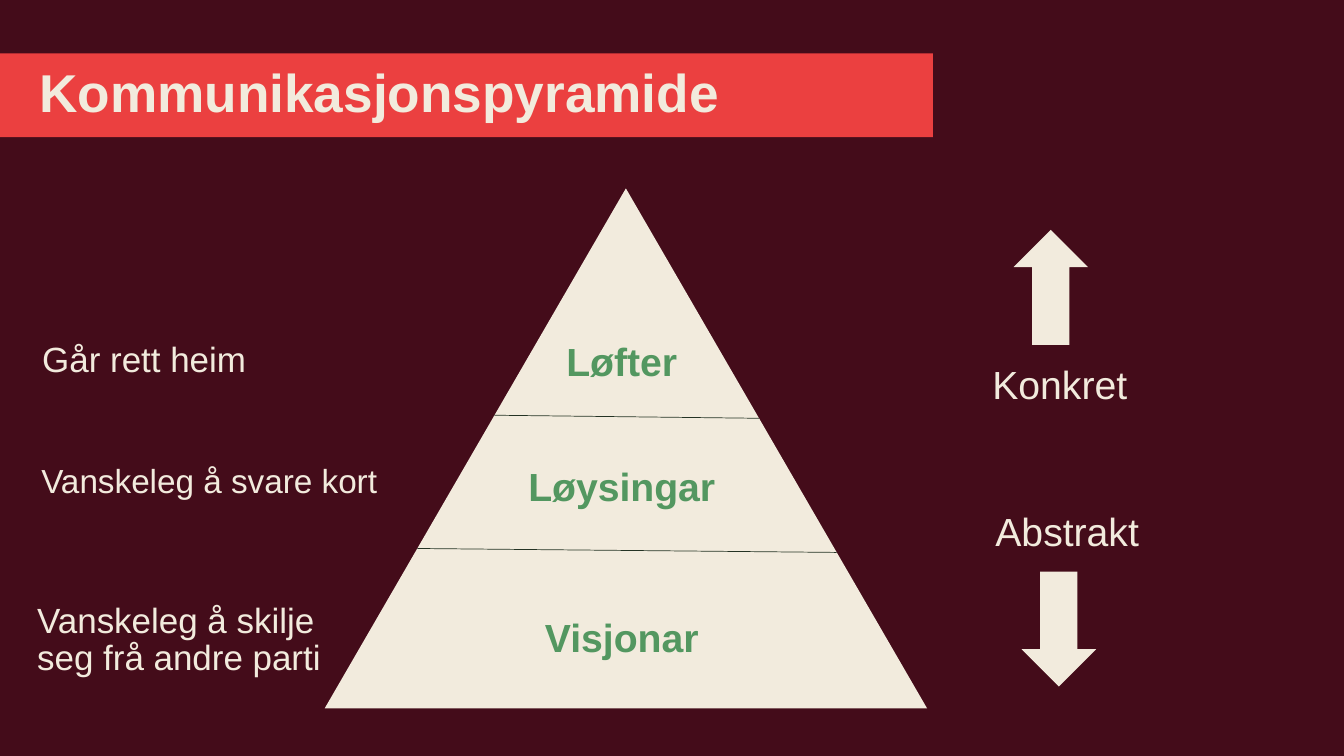
from lxml import etree
from pptx import Presentation
from pptx import util as u
from pptx.dml import color
from pptx.enum import shapes, text
from pptx.oxml import ns

Pt = u.Pt
COLORS = {"background": "440C1A", "banner": "EB4040", "cream": "F2EBDD",
          "green": "539760", "divider": "243324"}
FONT = "Arial"


def rgb(name):
    return color.RGBColor.from_string(COLORS[name])


def paint(shape, fill):
    shape.fill.solid()
    shape.fill.fore_color.rgb = rgb(fill)
    shape.line.fill.background()
    shape.shadow.inherit = False


def write(shape, wording, size, ink="cream", bold=False, spacing=0.9,
          align=text.PP_ALIGN.LEFT, anchor=text.MSO_ANCHOR.TOP, inset=0):
    frame = shape.text_frame
    frame.text = wording
    frame_format = {"word_wrap": True, "auto_size": text.MSO_AUTO_SIZE.NONE,
                    "vertical_anchor": anchor,
                    "margin_left": Pt(inset), "margin_right": Pt(inset),
                    "margin_top": 0, "margin_bottom": 0}
    for key, value in frame_format.items():
        setattr(frame, key, value)
    paragraph = frame.paragraphs[0]
    for key, value in {"alignment": align, "line_spacing": spacing,
                       "space_before": Pt(0)}.items():
        setattr(paragraph, key, value)
    font = paragraph.runs[0].font
    for key, value in {"name": FONT, "size": Pt(size), "bold": bold}.items():
        setattr(font, key, value)
    font.color.rgb = rgb(ink)


def add_label(slide, box, wording, size, **style):
    label = slide.shapes.add_textbox(*map(Pt, box))
    write(label, wording, size, **style)


def add_banner(slide, box, wording):
    banner = slide.shapes.title
    for key, value in zip(("left", "top", "width", "height"), box):
        setattr(banner, key, Pt(value))
    paint(banner, "banner")
    write(banner, wording, 38, bold=True, anchor=text.MSO_ANCHOR.MIDDLE, inset=28)


def add_divider(slide, start, end):
    divider = slide.shapes.add_connector(
        shapes.MSO_CONNECTOR.STRAIGHT, *map(Pt, start + end))
    divider.line.color.rgb = rgb("divider")
    divider.line.width = Pt(0.5)
    etree.SubElement(divider.element.spPr, ns.qn("a:effectLst"))


def add_pyramid(slide, box):
    left, top, width, height = box
    pyramid = slide.shapes.add_shape(
        shapes.MSO_SHAPE.ISOSCELES_TRIANGLE, *map(Pt, box))
    paint(pyramid, "cream")
    tier_width = 262
    tier_left = left + (width - tier_width) / 2 - 3
    for tier, offset in (("Løfter", 110.2), ("Løysingar", 199.5), ("Visjonar", 307.5)):
        add_label(slide, (tier_left, top + offset, tier_width, 43), tier, 28,
                  ink="green", bold=True, align=text.PP_ALIGN.CENTER)
    # Each divider runs from the left edge of the triangle to the right one
    for left_drop, right_drop in ((162, 164.2), (257.2, 260)):
        middle, slope = left + width / 2, width / height / 2
        add_divider(slide, (middle - left_drop * slope, top + left_drop),
                    (middle + right_drop * slope, top + right_drop))


def add_remarks(slide, box):
    """Place the remark beside each tier of the pyramid."""
    left, top, width, height = box
    remarks = (("Går rett heim", 3.6, 0, 25, 0.9),
               ("Vanskeleg å svare kort", 2.9, 89.3, 23.8, 0.8),
               ("Vanskeleg å skilje seg frå andre parti", 0, 185.8, 25, 0.9))
    for remark, indent, offset, size, spacing in remarks:
        remark_width = width if size == 25 else 262
        add_label(slide, (left + indent, top + offset, remark_width, height / 4.3),
                  remark, size, spacing=spacing)


def add_scale(slide, box):
    """Place the two arrows with their words, concrete above abstract."""
    left, top, width, height = box
    arrow_width, arrow_height = 53.3, 82.1
    ends = (("Konkret", 0, 97.2, 15.1, 0, 180),
            ("Abstrakt", 2.2, 202.3, 20.9, height - arrow_height, 0))
    for word, word_x, word_y, arrow_x, arrow_y, rotation in ends:
        arrow = slide.shapes.add_shape(
            shapes.MSO_SHAPE.DOWN_ARROW, Pt(left + arrow_x), Pt(top + arrow_y),
            Pt(arrow_width), Pt(arrow_height))
        arrow.rotation = rotation
        paint(arrow, "cream")
        add_label(slide, (left + word_x, top + word_y, width, 33), word, 28)


def main():
    deck = Presentation()
    deck.slide_width, deck.slide_height = Pt(960.5), Pt(540)
    slide = deck.slides.add_slide(deck.slide_layouts[5])
    slide.background.fill.solid()
    slide.background.fill.fore_color.rgb = rgb("background")
    add_banner(slide, (0, 38.2, 666.7, 59.8), "Kommunikasjonspyramide")
    add_pyramid(slide, (232, 134.6, 430.6, 371.5))
    add_remarks(slide, (26.6, 244.8, 220, 242))
    add_scale(slide, (709.2, 164.2, 155.5, 326.2))
    deck.save("out.pptx")


if __name__ == "__main__":
    main()
